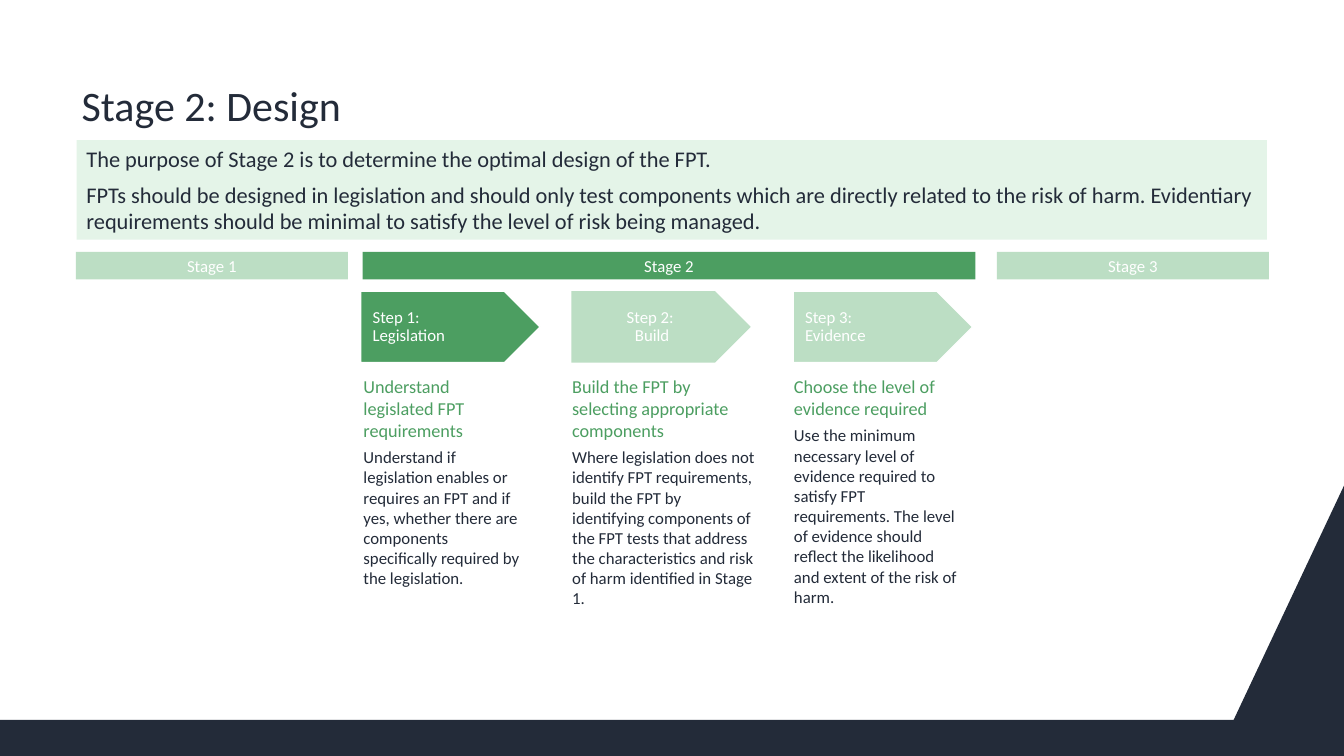
"""Build the "Stage 2: Design" process slide."""
from pptx import Presentation
from pptx.dml.color import RGBColor
from pptx.enum.shapes import MSO_SHAPE as SHAPE
from pptx.enum.text import MSO_ANCHOR as ANCHOR, PP_ALIGN as ALIGN
from pptx.util import Cm, Pt

NAVY = RGBColor(0x23, 0x2B, 0x39)
GREEN = RGBColor(0x4C, 0x9E, 0x61)
PALE_GREEN = RGBColor(0xBC, 0xDE, 0xC4)
MINT = RGBColor(0xE4, 0xF4, 0xE8)
WHITE = RGBColor(0xFF, 0xFF, 0xFF)


def add_block(kind, x, y, w, h, fill):
    sp = s.shapes.add_shape(kind, Cm(x), Cm(y), Cm(w), Cm(h))
    sp.shadow.inherit = False
    sp.fill.solid()
    sp.fill.fore_color.rgb = fill
    sp.line.fill.background()
    return sp


def write(sp, lines, anchor, margins=(0.25, 0.13, 0.25, 0.13), align=ALIGN.LEFT, after=0, spacing=1.0):
    tf = sp.text_frame
    tf.word_wrap = True
    tf.vertical_anchor = anchor
    tf.margin_left, tf.margin_top, tf.margin_right, tf.margin_bottom = map(Cm, margins)
    for i, (text, size, color) in enumerate(lines):
        p = tf.add_paragraph() if i else tf.paragraphs[0]
        p.text = text
        p.alignment = align
        p.space_after = Pt(after)
        p.line_spacing = spacing
        p.font.name = "Calibri"
        p.font.size = Pt(size)
        p.font.color.rgb = color


prs = Presentation()
prs.slide_width, prs.slide_height = Cm(33.87), Cm(19.05)
s = prs.slides.add_slide(prs.slide_layouts[6])

outline = [(0, 18.14), (0, 19.05), (33.87, 19.05), (33.87, 12.24)]
fb = s.shapes.build_freeform(Cm(31.09), Cm(18.14))
fb.add_line_segments([(Cm(x), Cm(y)) for x, y in outline], close=True)
footer = fb.convert_to_shape()
footer.shadow.inherit = False
footer.fill.solid()
footer.fill.fore_color.rgb = NAVY
footer.line.fill.background()

title = s.shapes.add_textbox(Cm(1.96), Cm(0.56), Cm(29.21), Cm(2.87))
write(title, [("Stage 2: Design", 30, NAVY)], ANCHOR.BOTTOM, (0.1, 0.13, 0.1, 0.13), spacing=0.9)

purpose = add_block(SHAPE.RECTANGLE, 1.93, 3.53, 30, 2.51, MINT)
write(purpose, [
    ("The purpose of Stage 2 is to determine the optimal design of the FPT.", 16, NAVY),
    ("FPTs should be designed in legislation and should only test components which are directly "
     "related to the risk of harm. Evidentiary requirements should be minimal to satisfy the level "
     "of risk being managed.", 16, NAVY),
], ANCHOR.MIDDLE, after=6)

stages = [
    ("Stage 1", 1.91, 6.86, PALE_GREEN),
    ("Stage 2", 9.14, 15.44, GREEN),
    ("Stage 3", 25.12, 6.86, PALE_GREEN),
]
for name, x, w, fill in stages:
    bar = add_block(SHAPE.RECTANGLE, x, 6.35, w, 0.69, fill)
    write(bar, [(name, 12, WHITE)], ANCHOR.MIDDLE, align=ALIGN.CENTER)

steps = [
    ("Step 1: \nLegislation", 9.09, GREEN, ALIGN.LEFT, 8.86, 4.57,
     "Understand legislated FPT requirements",
     "Understand if legislation enables or requires an FPT and if yes, whether there are "
     "components specifically required by the legislation."),
    ("Step 2: \nBuild", 14.4, PALE_GREEN, ALIGN.CENTER, 14.12, 5.23,
     "Build the FPT by selecting appropriate components",
     "Where legislation does not identify FPT requirements, build the FPT by identifying "
     "components of the FPT tests that address the characteristics and risk of harm identified "
     "in Stage 1."),
    ("Step 3: \nEvidence", 19.99, PALE_GREEN, ALIGN.LEFT, 19.71, 4.8,
     "Choose the level of evidence required",
     "Use the minimum necessary level of evidence required to satisfy FPT requirements. The level "
     "of evidence should reflect the likelihood and extent of the risk of harm."),
]
for label, arrow_x, fill, align, text_x, text_w, heading, detail in steps:
    arrow = add_block(SHAPE.PENTAGON, arrow_x, 7.34, 4.52, 1.8, fill)
    if align == ALIGN.LEFT:
        arrow.line.color.rgb = WHITE
        arrow.line.width = Pt(1)
    write(arrow, [(label, 12, WHITE)], ANCHOR.MIDDLE, (0.3, 0.05, 0.3, 0.05), align, spacing=0.9)
    panel = s.shapes.add_textbox(Cm(text_x), Cm(9.17), Cm(text_w), Cm(7.9))
    write(panel, [(heading, 13, GREEN), (detail, 12, NAVY)], ANCHOR.TOP, (0.3, 0.3, 0.3, 0.2), after=4)

prs.save("out.pptx")
